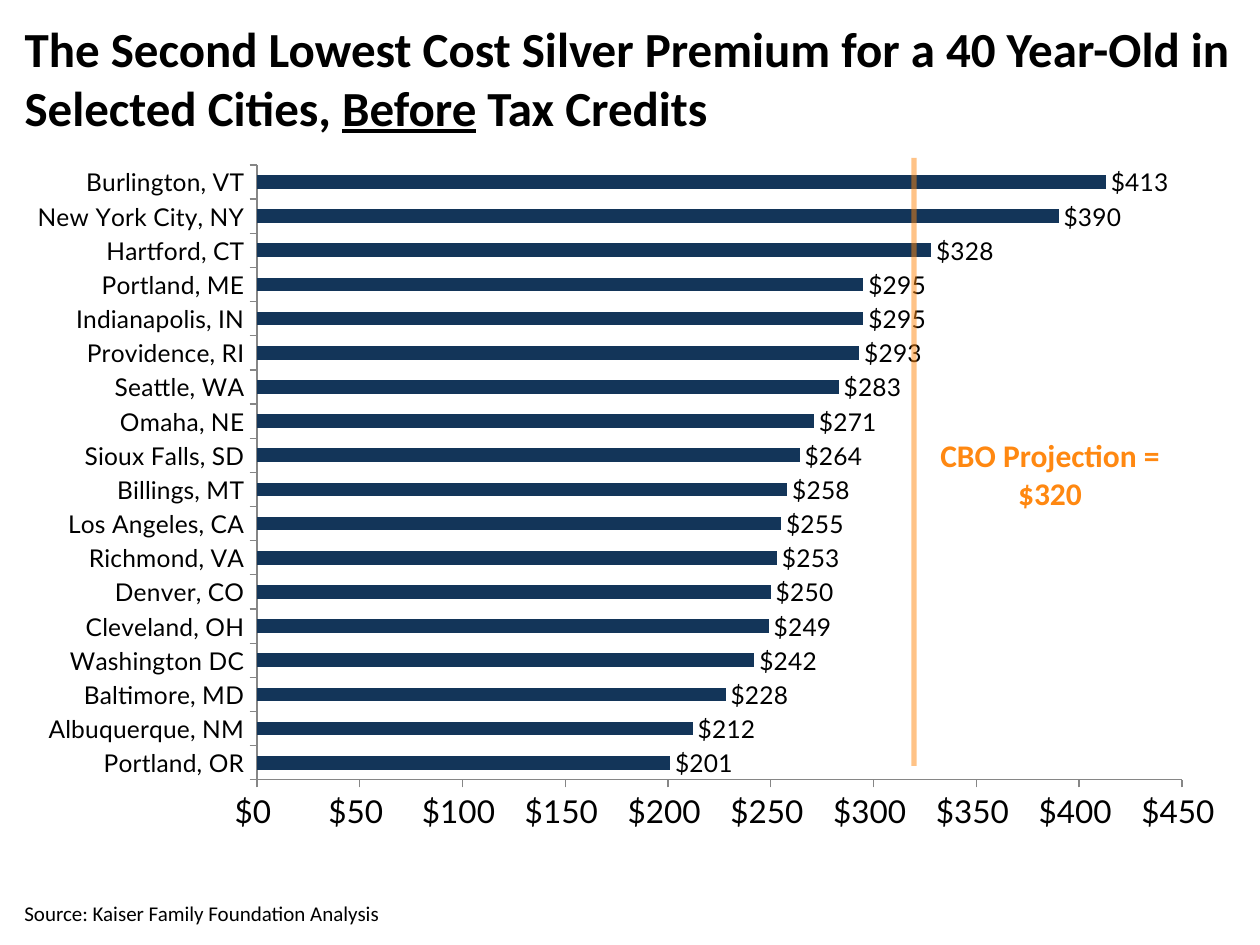
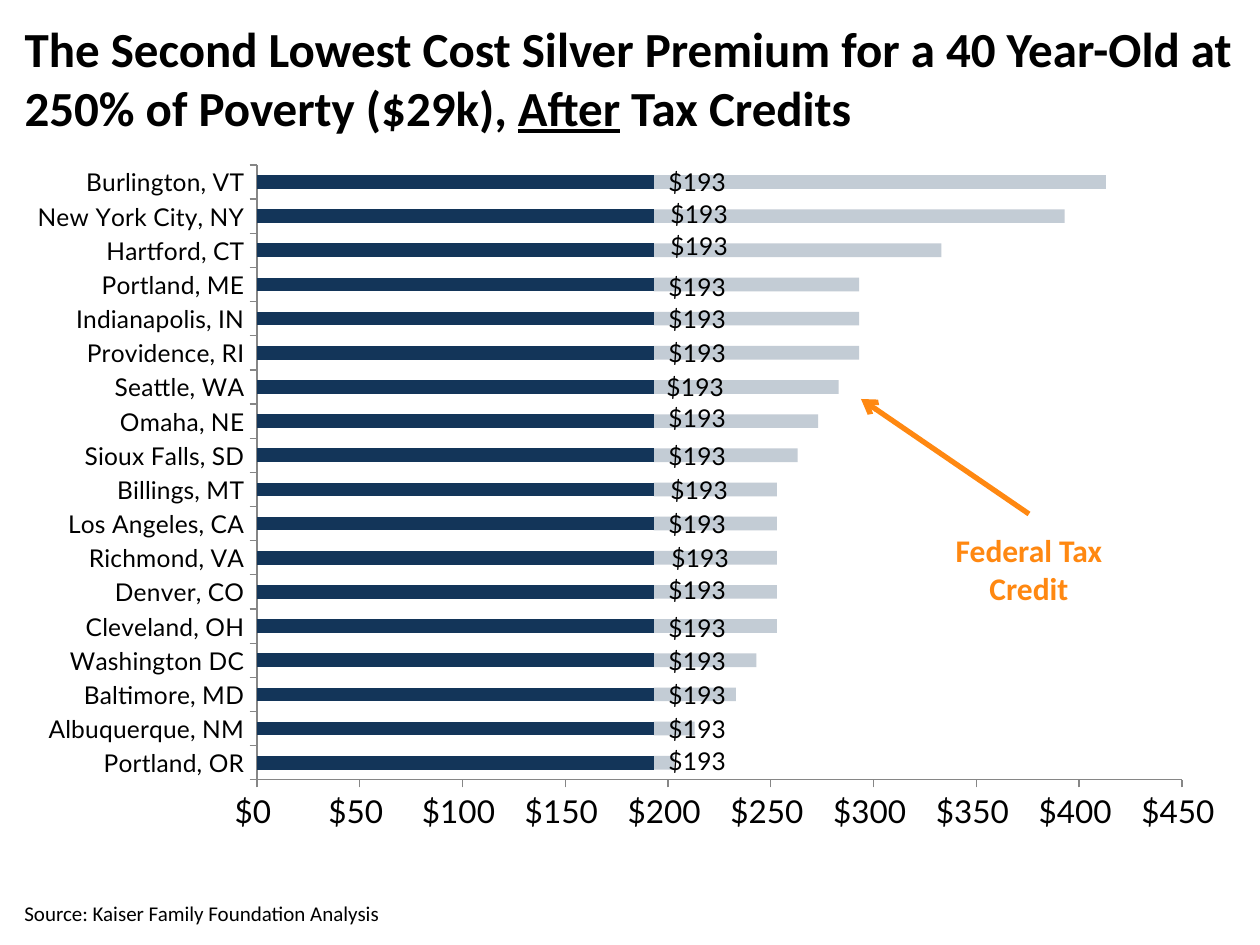
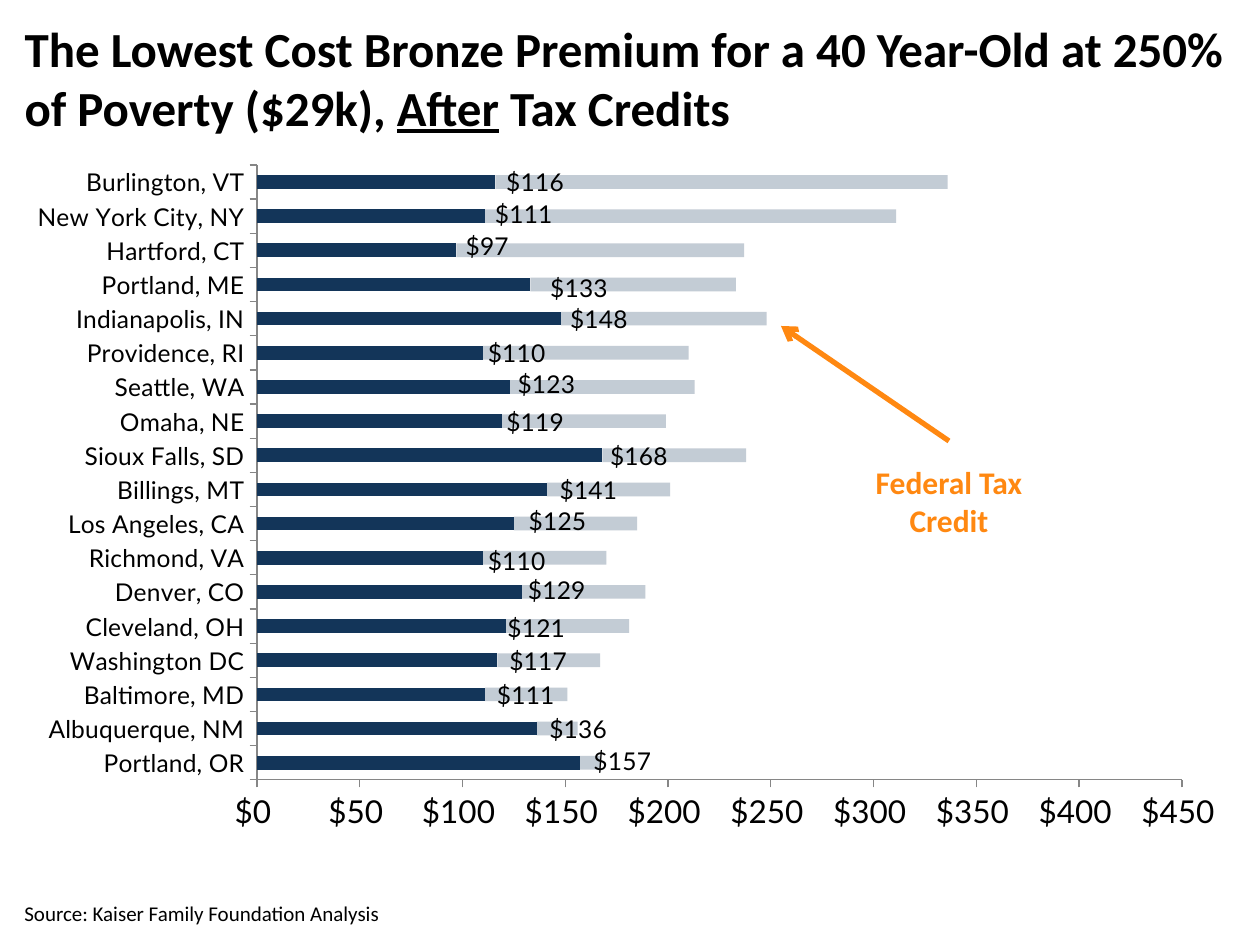
from lxml import etree
from pptx import Presentation
from pptx.chart import data as cd
from pptx.dml import color
from pptx.enum import chart as ch, shapes, text
from pptx.oxml import ns, parse_xml
from pptx.util import Pt

PX = 914400 / 126  # EMU in one px
NAVY, ORANGE, BLACK, GREY = "133559", "FF8811", "000000", "868686"
FONT, CHART_FONT = "Calibri", "Lato"
MONEY = '"$"#,##0_);[Red]\\("$"#,##0\\)'

# Boxes shared by the slides: left, top, width, height
TITLE = (12, 12, 1235, 126)
CHART = (13, 151, 1235, 693)
PLOT = (244, 14, 925, 615)  # within the chart
NOTE = (12, 856, 1147, 76)
SOURCE = "Source: Kaiser Family Foundation Analysis"

CITIES = ["Portland, OR", "Albuquerque, NM", "Baltimore, MD", "Washington DC",
          "Cleveland, OH", "Denver, CO", "Richmond, VA", "Los Angeles, CA",
          "Billings, MT", "Sioux Falls, SD", "Omaha, NE", "Seattle, WA",
          "Providence, RI", "Indianapolis, IN", "Portland, ME", "Hartford, CT",
          "New York City, NY", "Burlington, VT"]
SILVER = [201, 212, 228, 242, 249, 250, 253, 255, 258,
          264, 271, 283, 293, 295, 295, 328, 390, 413]
BRONZE = [157, 136, 111, 117, 121, 129, 110, 125, 141,
          168, 119, 123, 110, 148, 133, 97, 111, 116]
CAP = 193  # silver premium left after the credit
CREDIT = [round(full - CAP, -1) for full in SILVER]  # to the nearest ten

# Gap from bar end to label, and label lift, in px for each city
SILVER_GAP = [15, 15, 15, 15, 15, 15, 18, 15, 17, 15, 15, 13, 15, 15, 15, 17, 17, 15]
SILVER_DY = [-2, 0, 0, 0, 2, -2, 0, 0, 0, 0, -4, 0, 0, 0, 2, -5, -3, 0]
BRONZE_GAP = [14, 13, 12, 12, 2, 6, 5, 15, 13, 8, 5, 8, 5, 9, 20, 9, 10, 11]
BRONZE_DY = [-2, 0, 0, 0, 2, -2, 3, -3, 0, 0, 0, -3, 0, 0, 3, -5, -3, 0]


def rgb(code):
    return color.RGBColor.from_string(code)


def emu(*sizes):
    return [round(s * PX) for s in sizes]


def style(font, size, code=BLACK, bold=False, name=FONT):
    font.name, font.size, font.bold = name, Pt(size), bold
    font.color.rgb = rgb(code)


def fade(part, percent):
    """Make the solid colours inside an XML part see-through."""
    for clr in part.iter(ns.qn("a:srgbClr")):
        etree.SubElement(clr, ns.qn("a:alpha")).set("val", str(percent * 1000))


def layout(mode, **sizes):
    """Chart layout element with its sizes as shares of the chart."""
    inner = ""
    if mode == "edge":
        inner = ('<c:layoutTarget val="inner"/>'
                 '<c:xMode val="edge"/><c:yMode val="edge"/>')
    inner += "".join(f'<c:{k} val="{v:.4f}"/>' for k, v in sizes.items())
    return parse_xml(f'<c:layout {ns.nsdecls("c")}><c:manualLayout>{inner}'
                     "</c:manualLayout></c:layout>")


def add_title(slide, lead, key, rest):
    title = slide.shapes.title
    title.left, title.top, title.width, title.height = emu(*TITLE)
    frame = title.text_frame
    frame.auto_size = text.MSO_AUTO_SIZE.NONE
    frame.vertical_anchor = text.MSO_ANCHOR.TOP
    para = frame.paragraphs[0]
    para.alignment = text.PP_ALIGN.LEFT
    for words in (lead, key, rest):
        run = para.add_run()
        run.text = words
        run.font.underline = words == key
    style(para.font, 28, bold=True)


def add_text(slide, box, words, size, code=BLACK, bold=False,
             align=text.PP_ALIGN.LEFT, anchor=text.MSO_ANCHOR.TOP):
    frame = slide.shapes.add_textbox(*emu(*box)).text_frame
    frame.word_wrap = True
    frame.vertical_anchor = anchor
    para = frame.paragraphs[0]
    para.text, para.alignment = words, align
    style(para.font, size, code, bold)


def add_callout(slide, left, top, words):
    add_text(slide, (left, top, 252, 89), words, 18, ORANGE, True,
             text.PP_ALIGN.CENTER)


def add_line(slide, start, end):
    line = slide.shapes.add_connector(shapes.MSO_CONNECTOR.STRAIGHT,
                                      *emu(*start, *end))
    line.line.color.rgb = rgb(ORANGE)
    line.line.width = Pt(3)
    etree.SubElement(line._element.spPr, ns.qn("a:effectLst"))
    return line


def add_arrow(slide, start, end):
    ln = add_line(slide, start, end).line._get_or_add_ln()
    etree.SubElement(ln, ns.qn("a:tailEnd")).set("type", "arrow")


def set_axis(axis, size):
    axis.has_major_gridlines = False
    axis.major_tick_mark = ch.XL_TICK_MARK.OUTSIDE
    axis.minor_tick_mark = ch.XL_TICK_MARK.NONE
    axis.format.line.color.rgb = rgb(GREY)
    axis.format.line.width = Pt(0.75)
    style(axis.tick_labels.font, size, name=CHART_FONT)


def add_bars(slide, kind, *rows):
    """Bar chart of the cities, with labels on the first row of values."""
    data = cd.CategoryChartData()
    data.categories = CITIES
    for i, row in enumerate(rows, 1):
        data.add_series(f"Series {i}", row)
    chart = slide.shapes.add_chart(kind, *emu(*CHART), data).chart
    chart.has_legend = chart.has_title = False
    style(chart.font, 18, name=CHART_FONT)

    # Axes
    set_axis(chart.category_axis, 14)
    axis = chart.value_axis
    set_axis(axis, 18)
    axis.minimum_scale, axis.maximum_scale, axis.major_unit = 0, 450, 50
    axis.tick_labels.number_format = MONEY
    axis.tick_labels.number_format_is_linked = False

    # Bars
    plot = chart.plots[0]
    plot.gap_width, plot.vary_by_categories = 150, False
    for bars in plot.series:
        bars.format.fill.solid()
        bars.format.fill.fore_color.rgb = rgb(NAVY)
    labels = plot.series[0].data_labels
    labels.show_value = True
    labels.number_format, labels.number_format_is_linked = MONEY, False
    style(labels.font, 14, name=CHART_FONT)
    for lead in labels._element.iter(ns.qn("c:showLeaderLines")):
        lead.set("val", "0")

    # Plot area
    area = chart._chartSpace.chart.plotArea
    for old in area.findall(ns.qn("c:layout")):
        area.remove(old)
    x, y, w, h = PLOT
    area.insert(0, layout("edge", x=x / CHART[2], y=y / CHART[3],
                          w=w / CHART[2], h=h / CHART[3]))
    return plot


def add_stack(slide, values, gaps, lifts):
    """Premium and credit bars; labels sit just past the premium."""
    plot = add_bars(slide, ch.XL_CHART_TYPE.BAR_STACKED, values, CREDIT)
    plot.overlap = 100
    paid, credit = plot.series
    fade(credit._element.spPr, 25)
    paid.data_labels.position = ch.XL_LABEL_POSITION.INSIDE_END
    for i, (value, gap, lift) in enumerate(zip(values, gaps, lifts)):
        label = paid.points[i].data_label
        style(label.font, 14, name=CHART_FONT)
        label.position = ch.XL_LABEL_POSITION.INSIDE_END
        wide = 27 + 14 * len(str(value))
        label._dLbl.insert(1, layout("factor", x=(gap + wide) / CHART[2],
                                     y=lift / CHART[3]))


def add_slide(deck, *words):
    slide = deck.slides.add_slide(deck.slide_layouts[5])
    add_title(slide, *words)
    add_text(slide, NOTE, SOURCE, 12, anchor=text.MSO_ANCHOR.BOTTOM)
    return slide


def before(deck):
    slide = add_slide(deck, "The Second Lowest Cost Silver Premium for a 40 "
                      "Year-Old in Selected Cities, ", "Before", " Tax Credits")
    plot = add_bars(slide, ch.XL_CHART_TYPE.BAR_CLUSTERED, SILVER)
    plot.series[0].data_labels.position = ch.XL_LABEL_POSITION.OUTSIDE_END
    add_callout(slide, 924, 430, "CBO Projection = $320")
    line = add_line(slide, (914, 766), (914, 158))
    fade(line._element.spPr, 50)


def after(deck, lead, values, gaps, lifts, tip, drop):
    """Stacked slide; the callout hangs by drop below the arrow's tip."""
    slide = add_slide(deck, lead, "After", " Tax Credits")
    add_stack(slide, values, gaps, lifts)
    left, top = tip
    add_arrow(slide, (left + 168, top + 115), tip)
    add_callout(slide, left + 42, top + drop, "Federal Tax Credit")


def main():
    deck = Presentation()
    deck.slide_width, deck.slide_height = emu(1260, 945)
    before(deck)
    after(deck, "The Second Lowest Cost Silver Premium for a 40 Year-Old at "
          "250% of Poverty ($29k), ", [CAP] * len(CITIES),
          SILVER_GAP, SILVER_DY, (861, 399), 126)
    after(deck, "The Lowest Cost Bronze Premium for a 40 Year-Old at 250% of "
          "Poverty ($29k), ", BRONZE, BRONZE_GAP, BRONZE_DY, (781, 326), 131)
    deck.save("out.pptx")


if __name__ == "__main__":
    main()
